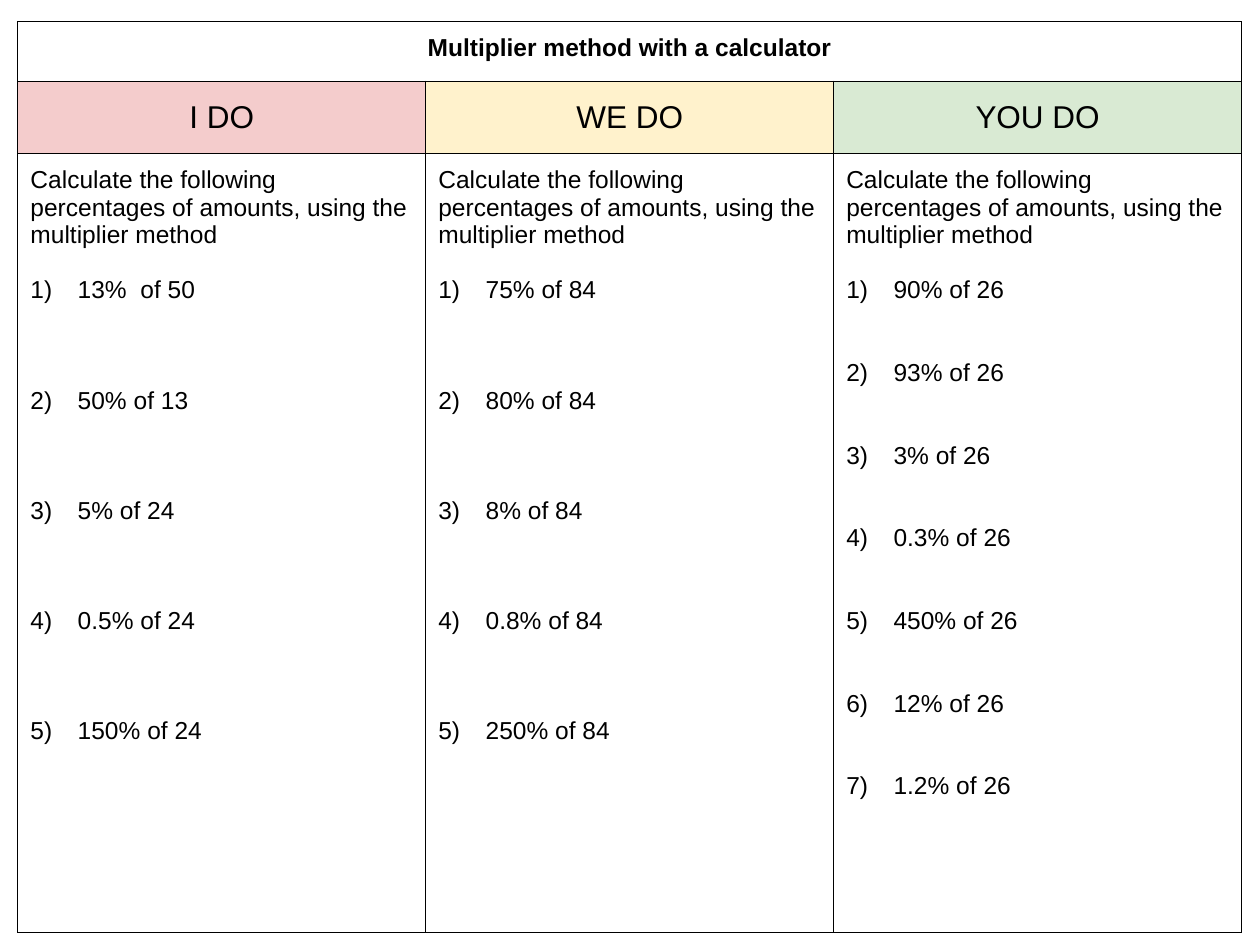
from dataclasses import dataclass

from lxml.etree import SubElement
from pptx import Presentation
from pptx.dml.color import RGBColor
from pptx.enum.text import MSO_ANCHOR, PP_ALIGN
from pptx.oxml.ns import qn
from pptx.util import Pt


@dataclass(frozen=True)
class Theme:
    font: str = "Arial"
    ink: str = "000000"
    teacher: str = "F4CCCC"
    together: str = "FFF2CC"
    pupil: str = "D9EAD3"
    body_size: float = 14
    heading_size: float = 18
    line_pitch: float = 15.75
    border: float = 0.75
    inset: float = 7.2
    number_indent: float = 27


THEME = Theme()
TITLE = "Multiplier method with a calculator"
TASK = "Calculate the following percentages of amounts, using the multiplier method"

# Heading, fill, lines of working space between questions, questions
COLUMNS = [
    ("I DO", THEME.teacher, 3,
     ["13%  of 50", "50% of 13", "5% of 24", "0.5% of 24", "150% of 24"]),
    ("WE DO", THEME.together, 3,
     ["75% of 84", "80% of 84", "8% of 84", "0.8% of 84", "250% of 84"]),
    ("YOU DO", THEME.pupil, 2,
     ["90% of 26", "93% of 26", "3% of 26", "0.3% of 26", "450% of 26",
      "12% of 26", "1.2% of 26"]),
]
LEFT, TOP = 10.2, 12.4
COLUMN_WIDTH = 233.1
ROW_HEIGHTS = [34, 41.5, 445.2]


def write(paragraph, text, size=THEME.body_size, bold=False,
          align=PP_ALIGN.LEFT, before=0):
    paragraph.alignment = align
    paragraph.space_before = Pt(before)
    span = paragraph.add_run()
    span.text = text
    span.font.name = THEME.font
    span.font.size = Pt(size)
    span.font.bold = bold
    span.font.color.rgb = RGBColor.from_string(THEME.ink)


def number(paragraph):
    """Turn a paragraph into an automatically numbered 1) 2) 3) item."""
    properties = paragraph._p.get_or_add_pPr()
    properties.set("marL", str(Pt(THEME.number_indent)))
    properties.set("indent", str(-Pt(THEME.number_indent)))
    color = SubElement(properties, qn("a:buClr"))
    SubElement(color, qn("a:srgbClr"), val=THEME.ink)
    SubElement(properties, qn("a:buFont"), typeface=THEME.font)
    SubElement(properties, qn("a:buAutoNum"), type="arabicParenR")


class PageBuilder:
    def __init__(self, theme, page):
        self.theme = theme
        self.page = page

    def table(self, left, top, column_widths, row_heights):
        frame = self.page.shapes.add_table(
            len(row_heights), len(column_widths), Pt(left), Pt(top),
            Pt(sum(column_widths)), Pt(sum(row_heights)))
        table = frame.table
        table.first_row = table.horz_banding = False
        for column, width in zip(table.columns, column_widths):
            column.width = Pt(width)
        for row, height in zip(table.rows, row_heights):
            row.height = Pt(height)
        for cell in table.iter_cells():
            self.cell_frame(cell)
        return table

    def cell_frame(self, cell):
        """Give a cell its insets, four borders and an empty fill."""
        inset = Pt(self.theme.inset)
        cell.margin_left = cell.margin_right = inset
        cell.margin_top = cell.margin_bottom = inset
        properties = cell._tc.get_or_add_tcPr()
        for side in ("lnL", "lnR", "lnT", "lnB"):
            line = SubElement(properties, qn(f"a:{side}"),
                              w=str(Pt(self.theme.border)))
            fill = SubElement(line, qn("a:solidFill"))
            SubElement(fill, qn("a:srgbClr"), val=self.theme.ink)
        cell.fill.background()

    def title(self, cell, text):
        write(cell.text_frame.paragraphs[0], text, bold=True,
              align=PP_ALIGN.CENTER)

    def heading(self, cell, text, color):
        cell.fill.solid()
        cell.fill.fore_color.rgb = RGBColor.from_string(color)
        cell.vertical_anchor = MSO_ANCHOR.MIDDLE
        write(cell.text_frame.paragraphs[0], text,
              size=self.theme.heading_size, align=PP_ALIGN.CENTER)

    def exercise(self, cell, task, questions, working_lines):
        box = cell.text_frame
        write(box.paragraphs[0], task)
        for index, question in enumerate(questions):
            gap_lines = working_lines if index else 1
            paragraph = box.add_paragraph()
            write(paragraph, question,
                  before=gap_lines * self.theme.line_pitch)
            number(paragraph)


def main():
    deck = Presentation()
    deck.slide_width, deck.slide_height = Pt(720), Pt(540)
    blank_layout = deck.slide_layouts[6]
    builder = PageBuilder(THEME, deck.slides.add_slide(blank_layout))

    table = builder.table(LEFT, TOP, [COLUMN_WIDTH] * len(COLUMNS), ROW_HEIGHTS)
    table.cell(0, 0).merge(table.cell(0, len(COLUMNS) - 1))
    builder.title(table.cell(0, 0), TITLE)
    for index, (name, color, working_lines, questions) in enumerate(COLUMNS):
        builder.heading(table.cell(1, index), name, color)
        builder.exercise(table.cell(2, index), TASK, questions, working_lines)

    deck.save("out.pptx")


if __name__ == "__main__":
    main()
